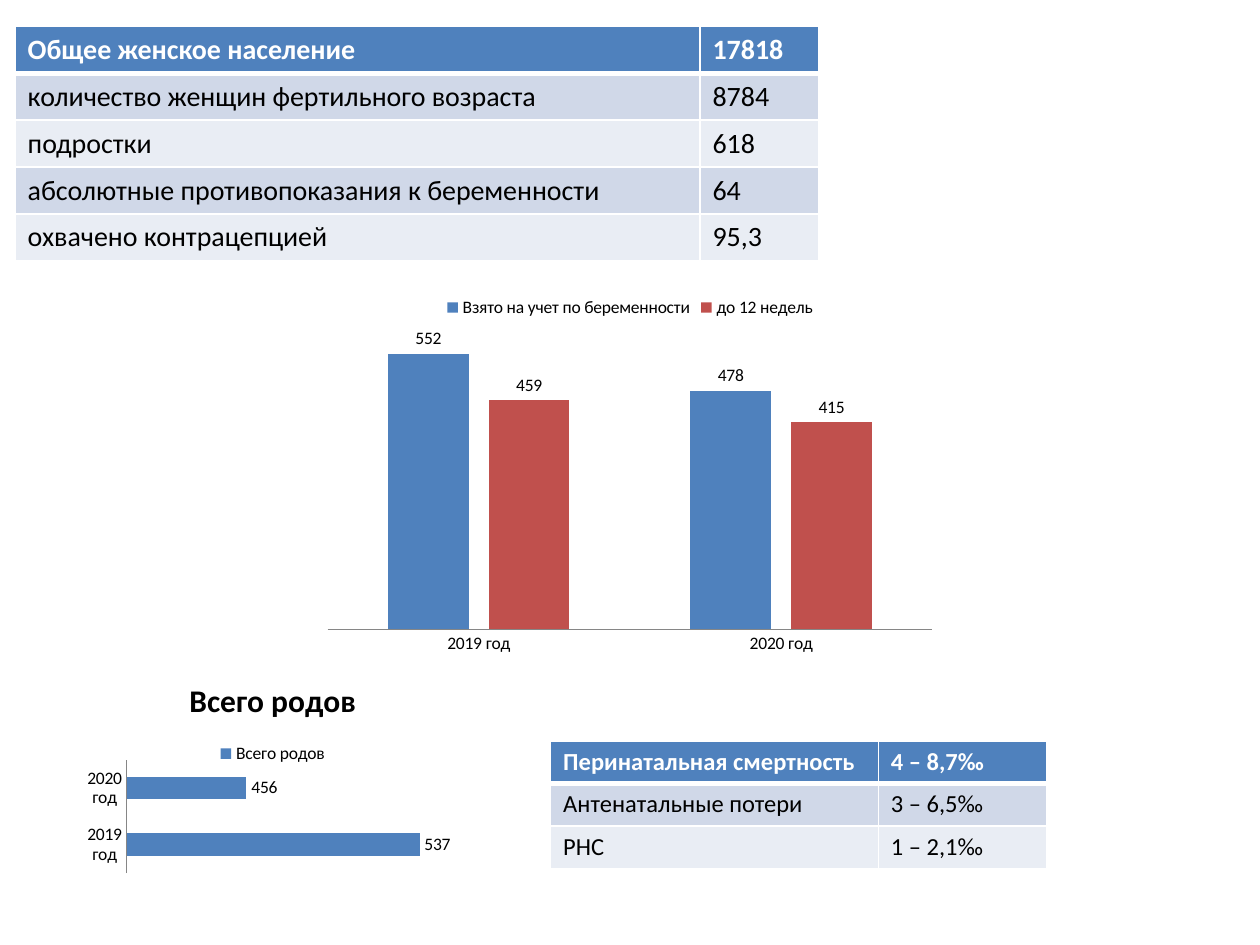
from dataclasses import dataclass
from typing import Optional

import pptx
import pptx.chart.data
import pptx.dml.color
import pptx.enum.chart
import pptx.oxml
import pptx.oxml.ns
import pptx.util

RGBColor = pptx.dml.color.RGBColor
ChartType = pptx.enum.chart.XL_CHART_TYPE
WHITE = RGBColor(0xFF, 0xFF, 0xFF)
BLACK = RGBColor(0, 0, 0)
BLUE = RGBColor(0x4F, 0x81, 0xBD)
RED = RGBColor(0xC0, 0x50, 0x4D)
AXIS_GRAY = RGBColor(0x86, 0x86, 0x86)
BANDS = (RGBColor(0xE9, 0xED, 0xF4), RGBColor(0xD0, 0xD8, 0xE8))
FONT = "Calibri"
SLIDE_WIDTH, SLIDE_HEIGHT = 10, 7.5
YEARS = ("2019 год", "2020 год")


@dataclass(frozen=True)
class Box:
    """Place on the slide, in shares of its width and height."""
    left: float
    top: float
    width: float
    height: float

    def emu(self) -> list[int]:
        return [pptx.util.Inches(share * side) for share, side in (
            (self.left, SLIDE_WIDTH), (self.top, SLIDE_HEIGHT),
            (self.width, SLIDE_WIDTH), (self.height, SLIDE_HEIGHT))]


@dataclass(frozen=True)
class StatTable:
    box: Box
    label_share: float
    size: int
    rows: tuple[tuple[str, str], ...]


@dataclass(frozen=True)
class Series:
    name: str
    values: tuple[int, ...]
    color: RGBColor


@dataclass(frozen=True)
class YearChart:
    box: Box
    kind: ChartType
    scale: tuple[int, int]
    series: tuple[Series, ...]
    title: Optional[str] = None
    plot: Optional[Box] = None


TABLES = (
    StatTable(Box(0.012, 0.028, 0.638, 0.248), 0.852, 16, (
        ("Общее женское население", "17818"),
        ("количество женщин фертильного возраста", "8784"),
        ("подростки", "618"),
        ("абсолютные противопоказания к беременности", "64"),
        ("охвачено контрацепцией", "95,3"))),
    StatTable(Box(0.437, 0.784, 0.394, 0.133), 0.66, 14, (
        ("Перинатальная смертность", "4 – 8,7‰"),
        ("Антенатальные потери", "3 – 6,5‰"),
        ("РНС", "1 – 2,1‰"))),
)
CHARTS = (
    YearChart(Box(0.25, 0.3, 0.5, 0.4), ChartType.COLUMN_CLUSTERED, (0, 600), (
        Series("Взято на учет по беременности", (552, 478), BLUE),
        Series("до 12 недель", (459, 415), RED))),
    YearChart(Box(0.051, 0.7, 0.331, 0.231), ChartType.BAR_CLUSTERED, (400, 560),
              (Series("Всего родов", (537, 456), BLUE),),
              title="Всего родов", plot=Box(0.15, 0.45, 0.82, 0.52)),
)


def set_borders(cell, bottom_width: float) -> None:
    properties = cell._tc.get_or_add_tcPr()
    for index, side in enumerate("LRTB"):
        width = pptx.util.Pt(bottom_width if side == "B" else 1)
        properties.insert(index, pptx.oxml.parse_xml(
            f'<a:ln{side} {pptx.oxml.ns.nsdecls("a")} w="{width}"><a:solidFill>'
            f'<a:srgbClr val="{WHITE}"/></a:solidFill></a:ln{side}>'))


def draw_table(slide, stats: StatTable) -> None:
    left, top, width, height = stats.box.emu()
    table = slide.shapes.add_table(len(stats.rows), 2, left, top, width, height).table
    table.columns[0].width = int(width * stats.label_share)
    table.columns[1].width = width - table.columns[0].width
    for row, texts in enumerate(stats.rows):
        header = row == 0
        for column, text in enumerate(texts):
            cell = table.cell(row, column)
            cell.text = text
            cell.fill.solid()
            cell.fill.fore_color.rgb = BLUE if header else BANDS[row % 2]
            set_borders(cell, 3 if header else 1)
            font = cell.text_frame.paragraphs[0].font
            font.name, font.size, font.bold = FONT, pptx.util.Pt(stats.size), header
            font.color.rgb = WHITE if header else BLACK


def style_font(font, size: int, bold: bool = False) -> None:
    font.name, font.size, font.bold = FONT, pptx.util.Pt(size), bold
    font.color.rgb = BLACK


def place_plot(chart, area: Box) -> None:
    """Fix the inner plot area, in shares of the chart."""
    plot_area = chart._chartSpace.chart.plotArea
    for layout in plot_area.findall(pptx.oxml.ns.qn("c:layout")):
        plot_area.remove(layout)
    edges = "".join(f'<c:{tag} val="{value}"/>' for tag, value in (
        ("xMode", "edge"), ("yMode", "edge"), ("x", area.left), ("y", area.top),
        ("w", area.width), ("h", area.height)))
    plot_area.insert(0, pptx.oxml.parse_xml(
        f'<c:layout {pptx.oxml.ns.nsdecls("c")}><c:manualLayout>'
        f'<c:layoutTarget val="inner"/>{edges}</c:manualLayout></c:layout>'))


def draw_chart(slide, spec_chart: YearChart) -> None:
    data = pptx.chart.data.CategoryChartData()
    data.categories = YEARS
    for series in spec_chart.series:
        data.add_series(series.name, series.values)
    chart = slide.shapes.add_chart(spec_chart.kind, *spec_chart.box.emu(), data).chart
    style_font(chart.font, 10)

    chart.has_title = spec_chart.title is not None
    if chart.has_title:
        heading = chart.chart_title.text_frame
        heading.text = spec_chart.title
        style_font(heading.paragraphs[0].font, 18, bold=True)
        chart.chart_title.include_in_layout = False
    chart.has_legend = True
    chart.legend.position = pptx.enum.chart.XL_LEGEND_POSITION.TOP
    chart.legend.include_in_layout = False

    chart.category_axis.major_tick_mark = pptx.enum.chart.XL_TICK_MARK.NONE
    chart.category_axis.format.line.color.rgb = AXIS_GRAY
    chart.value_axis.visible = False
    chart.value_axis.has_major_gridlines = False
    chart.value_axis.minimum_scale, chart.value_axis.maximum_scale = spec_chart.scale

    bars = chart.plots[0]
    bars.gap_width, bars.overlap, bars.vary_by_categories = 150, -25, False
    bars.has_data_labels = True
    bars.data_labels.show_value = True
    bars.data_labels.position = pptx.enum.chart.XL_LABEL_POSITION.OUTSIDE_END
    for drawn, series in zip(bars.series, spec_chart.series):
        drawn.format.fill.solid()
        drawn.format.fill.fore_color.rgb = series.color
        drawn.invert_if_negative = False
    if spec_chart.plot:
        place_plot(chart, spec_chart.plot)


def main() -> None:
    presentation = pptx.Presentation()
    presentation.slide_width = pptx.util.Inches(SLIDE_WIDTH)
    presentation.slide_height = pptx.util.Inches(SLIDE_HEIGHT)
    blank_layout = presentation.slide_layouts[6]
    slide = presentation.slides.add_slide(blank_layout)
    population, mortality = TABLES
    draw_table(slide, population)
    for year_chart in CHARTS:
        draw_chart(slide, year_chart)
    draw_table(slide, mortality)
    presentation.save("out.pptx")


if __name__ == "__main__":
    main()
